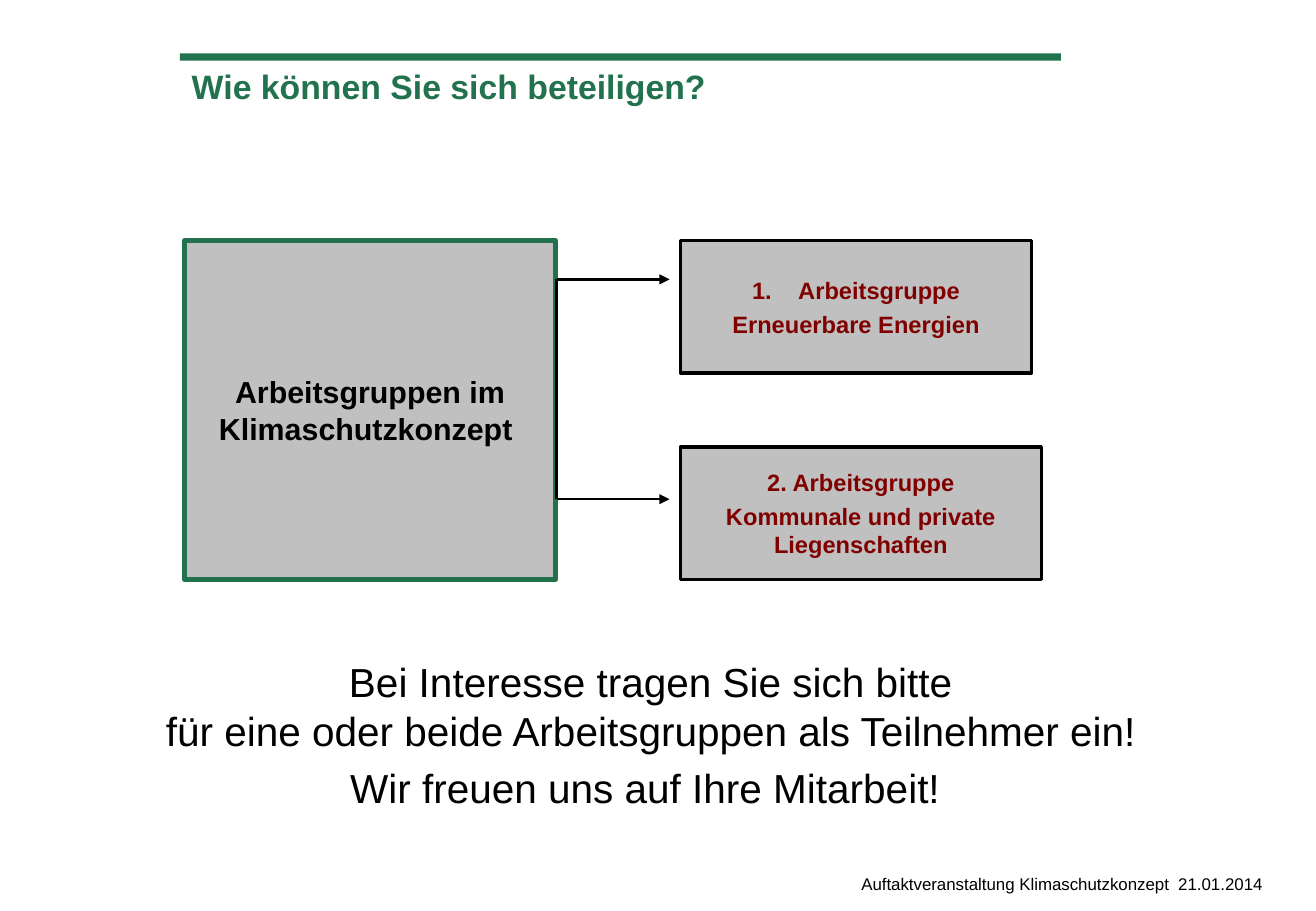
from dataclasses import dataclass
from typing import Optional

import pptx
import pptx.dml.color
import pptx.enum.shapes
import pptx.enum.text
import pptx.oxml
import pptx.oxml.ns
import pptx.util
from pptx.util import Inches

ALIGN = pptx.enum.text.PP_ALIGN
ANCHOR = pptx.enum.text.MSO_ANCHOR
RECTANGLE = pptx.enum.shapes.MSO_SHAPE.RECTANGLE


@dataclass(frozen=True)
class Theme:
    font: str = "Arial"
    green: str = "22724D"
    frame_green: str = "21724D"
    grey: str = "C0C0C0"
    black: str = "000000"
    red: str = "800000"
    title: int = 20
    body: int = 24
    topic: int = 18
    group: int = 14
    footer: int = 10
    arrow_width: float = 1.5
    space_ratio: float = 0.23


THEME = Theme()


@dataclass(frozen=True)
class Area:
    left: float
    top: float
    width: float
    height: float


@dataclass(frozen=True)
class Text:
    paragraphs: tuple[str, ...]
    size: int
    color: str = THEME.black
    bold: bool = False
    align: ALIGN = ALIGN.CENTER
    numbered: bool = False


@dataclass(frozen=True)
class Box:
    area: Area
    fill: str
    line: Optional[str] = None
    line_width: float = 0
    text: Optional[Text] = None


@dataclass(frozen=True)
class Label:
    area: Area
    text: Text


@dataclass(frozen=True)
class Line:
    start: tuple[float, float]
    end: tuple[float, float]
    arrow: bool = False


def rgb(color: str) -> pptx.dml.color.RGBColor:
    return pptx.dml.color.RGBColor.from_string(color)


def xml_element(tag: str, **attributes: str):
    element = pptx.oxml.parse_xml(f"<{tag} {pptx.oxml.ns.nsdecls('a')}/>")
    for name, value in attributes.items():
        element.set(name, value)
    return element


def number_paragraph(p) -> None:
    pPr = p._p.get_or_add_pPr()
    indent = Inches(0.38)
    pPr.set("marL", str(indent))
    pPr.set("indent", str(-indent))
    pPr.append(xml_element("a:buFont", typeface="+mj-lt"))
    pPr.append(xml_element("a:buAutoNum", type="arabicPeriod"))


def write_text(tf, text: Text, anchor: ANCHOR) -> None:
    """Fill a frame; the first paragraph alone carries the optional number."""
    tf.word_wrap = True
    tf.vertical_anchor = anchor
    for i, content in enumerate(text.paragraphs):
        p = tf.add_paragraph() if i else tf.paragraphs[0]
        p.alignment = text.align
        if i:
            p.space_before = pptx.util.Pt(round(text.size * THEME.space_ratio, 1))
        elif text.numbered:
            number_paragraph(p)
        for j, part in enumerate(content.split("\n")):
            if j:
                p.add_line_break()
            r = p.add_run()
            r.text = part
            r.font.name = THEME.font
            r.font.size = pptx.util.Pt(text.size)
            r.font.bold = text.bold
            r.font.color.rgb = rgb(text.color)


def inches(area: Area) -> tuple[int, ...]:
    return tuple(map(Inches, (area.left, area.top, area.width, area.height)))


def draw_box(s, box: Box) -> None:
    sp = s.shapes.add_shape(RECTANGLE, *inches(box.area))
    sp.shadow.inherit = False
    sp.fill.solid()
    sp.fill.fore_color.rgb = rgb(box.fill)
    if box.line:
        sp.line.color.rgb = rgb(box.line)
        sp.line.width = pptx.util.Pt(box.line_width)
    else:
        sp.line.fill.background()
    if box.text:
        write_text(sp.text_frame, box.text, ANCHOR.MIDDLE)


def draw_label(s, label: Label) -> None:
    sp = s.shapes.add_textbox(*inches(label.area))
    write_text(sp.text_frame, label.text, ANCHOR.TOP)


def draw_line(s, line: Line) -> None:
    cxn = s.shapes.add_connector(
        pptx.enum.shapes.MSO_CONNECTOR.STRAIGHT,
        *map(Inches, line.start + line.end),
    )
    cxn.line.color.rgb = rgb(THEME.black)
    cxn.line.width = pptx.util.Pt(THEME.arrow_width)
    if line.arrow:
        cxn.line._get_or_add_ln().append(xml_element("a:tailEnd", type="triangle"))
    cxn._element.spPr.append(xml_element("a:effectLst"))


def group_box(top: float, width: float, paragraphs: tuple[str, ...],
              numbered: bool = False) -> Box:
    text = Text(paragraphs, THEME.group, THEME.red, bold=True, numbered=numbered)
    return Box(Area(5.6, top, width, 1.09), THEME.grey, THEME.black, 2, text)


BRANCH_X, ARROW_END = 4.58, 5.51
BRANCHES = (2.3, 4.11)

LABELS = (
    Label(Area(6.99, 7.14, 3.84, 0.31),
          Text(("Auftaktveranstaltung Klimaschutzkonzept  21.01.2014",),
               THEME.footer, align=ALIGN.LEFT)),
    Label(Area(1.48, 0.49, 7.16, 0.93),
          Text(("Wie können Sie sich beteiligen?",),
               THEME.title, THEME.green, bold=True, align=ALIGN.LEFT)),
    Label(Area(0.57, 5.36, 9.57, 0.83),
          Text(("Bei Interesse tragen Sie sich bitte\n"
                "für eine oder beide Arbeitsgruppen als Teilnehmer ein!",
                "Wir freuen uns auf Ihre Mitarbeit! "), THEME.body)),
)
BOXES = (
    Box(Area(1.48, 0.44, 7.25, 0.06), THEME.green),
    Box(Area(1.52, 1.98, 3.05, 2.79), THEME.grey, THEME.frame_green, 3,
        Text(("Arbeitsgruppen im Klimaschutzkonzept ",), THEME.topic, bold=True)),
    group_box(3.68, 2.97, ("2. Arbeitsgruppe", "Kommunale und private Liegenschaften")),
    group_box(1.98, 2.89, ("Arbeitsgruppe", "Erneuerbare Energien"), numbered=True),
)
LINES = (
    Line((BRANCH_X, BRANCHES[0]), (BRANCH_X, BRANCHES[1])),
    *(Line((BRANCH_X, y), (ARROW_END, y), arrow=True) for y in BRANCHES),
)


def main() -> None:
    prs = pptx.Presentation()
    prs.slide_width, prs.slide_height = Inches(10.83), Inches(7.5)
    s = prs.slides.add_slide(prs.slide_layouts[6])
    for label in LABELS:
        draw_label(s, label)
    for box in BOXES:
        draw_box(s, box)
    for line in LINES:
        draw_line(s, line)
    prs.save("out.pptx")


if __name__ == "__main__":
    main()
